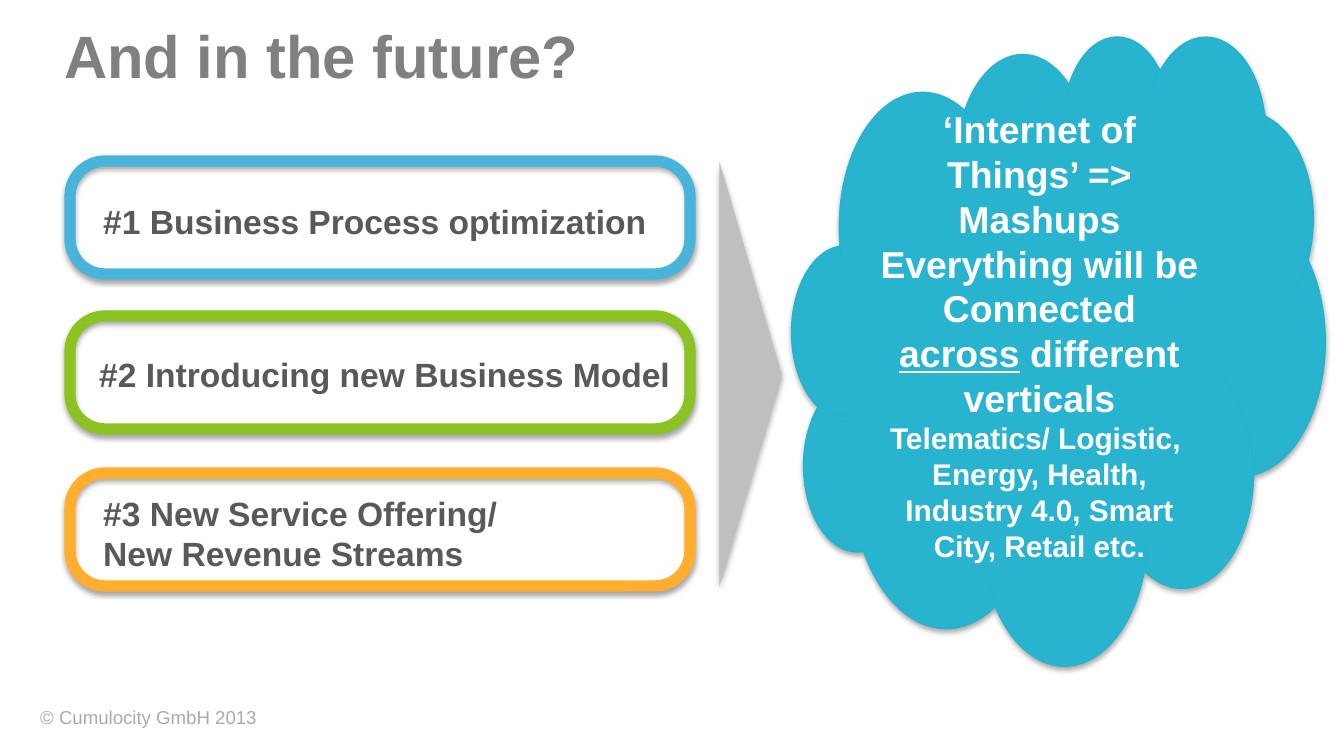
"""Build the slide "And in the future?" with three goals leading to a cloud."""
from lxml import etree
from pptx import Presentation
from pptx.dml.color import RGBColor
from pptx.enum.shapes import MSO_SHAPE
from pptx.enum.text import MSO_ANCHOR, PP_ALIGN
from pptx.util import Pt

ROUND, CLOUD, TRIANGLE = MSO_SHAPE.ROUNDED_RECTANGLE, MSO_SHAPE.CLOUD, MSO_SHAPE.ISOSCELES_TRIANGLE
TOP, MIDDLE, CENTER = MSO_ANCHOR.TOP, MSO_ANCHOR.MIDDLE, PP_ALIGN.CENTER
PX = 914400 / 134.4
SHADOW = (
    '<a:effectLst xmlns:a="http://schemas.openxmlformats.org/drawingml/2006/main">'
    '<a:outerShdw blurRad="39370" dist="22860" dir="5400000" rotWithShape="0">'
    '<a:srgbClr val="000000"><a:alpha val="35000"/></a:srgbClr>'
    '</a:outerShdw></a:effectLst>'
)


def box(*px):
    return [round(v * PX) for v in px]


def write(p, text, color, **fmt):
    for i, line in enumerate(text.split("\n")):
        if i:
            p.add_line_break()
        if line:
            r = p.add_run()
            r.text = line
            r.font.color.rgb = RGBColor.from_string(color)
            for name, value in {"name": "Arial", "bold": True, **fmt}.items():
                setattr(r.font, name, value)


prs = Presentation()
prs.slide_width, prs.slide_height = box(1344, 756)
s = prs.slides.add_slide(prs.slide_layouts[6])

goals = [
    (161, "48B4D9"),
    (316, "8CC323"),
    (473, "FFAF2D"),
]
shapes = [(ROUND, (70, y, 620, 113), None, color, 6) for y, color in goals]
shapes += [
    (CLOUD, (792, 35, 533, 629), "28B4CF", "23B3CF", 0.75),
    (TRIANGLE, (538, 343, 425, 62), "BFBFBF", None, 0),
]
for kind, place, fill, line, width in shapes:
    sp = s.shapes.add_shape(kind, *box(*place))
    sp.shadow.inherit = False
    if fill:
        sp.fill.solid()
        sp.fill.fore_color.rgb = RGBColor.from_string(fill)
    else:
        sp.fill.background()
    if line:
        sp.line.color.rgb = RGBColor.from_string(line)
        sp.line.width = Pt(width)
    else:
        sp.line.fill.background()
    effects = sp._element.spPr.find("{*}effectLst")
    effects.getparent().replace(effects, etree.fromstring(SHADOW))
    if kind == ROUND:
        sp.adjustments[0] = 0.31
    elif kind == TRIANGLE:
        sp.rotation = 90
    else:
        cloud = sp

texts = [
    ((27, 699, 246, 36), "© Cumulocity GmbH 2013", "ABABAC", 10, False, TOP),
    ((51, 19, 1238, 71), "And in the future?", "808080", 32, True, MIDDLE),
    ((90, 194, 575, 54), "#1 Business Process optimization", "595959", 18, True, TOP),
    ((86, 347, 603, 54), "#2 Introducing new Business Model", "595959", 18, True, TOP),
    ((90, 486, 425, 95), "#3 New Service Offering/\nNew Revenue Streams", "595959", 18, True, TOP),
]
for place, text, color, size, bold, anchor in texts:
    tf = s.shapes.add_textbox(*box(*place)).text_frame
    tf.word_wrap = anchor == MIDDLE
    tf.vertical_anchor = anchor
    write(tf.paragraphs[0], text, color, size=Pt(size), bold=bold)

vision = [
    [("‘Internet of Things’ => Mashups", 20, False)],
    [
        ("Everything will be Connected ", 20, False),
        ("across", 20, True),
        (" different verticals\n", 20, False),
        ("Telematics/ Logistic, ", 16, False),
    ],
    [("Energy, Health, Industry 4.0, Smart City, Retail etc.", 16, False)],
]
tf = cloud.text_frame
tf.word_wrap = True
tf.vertical_anchor = MIDDLE
for i, runs in enumerate(vision):
    p = tf.add_paragraph() if i else tf.paragraphs[0]
    p.alignment = CENTER
    for text, size, underline in runs:
        write(p, text, "FFFFFF", size=Pt(size), underline=underline)

prs.save("out.pptx")
